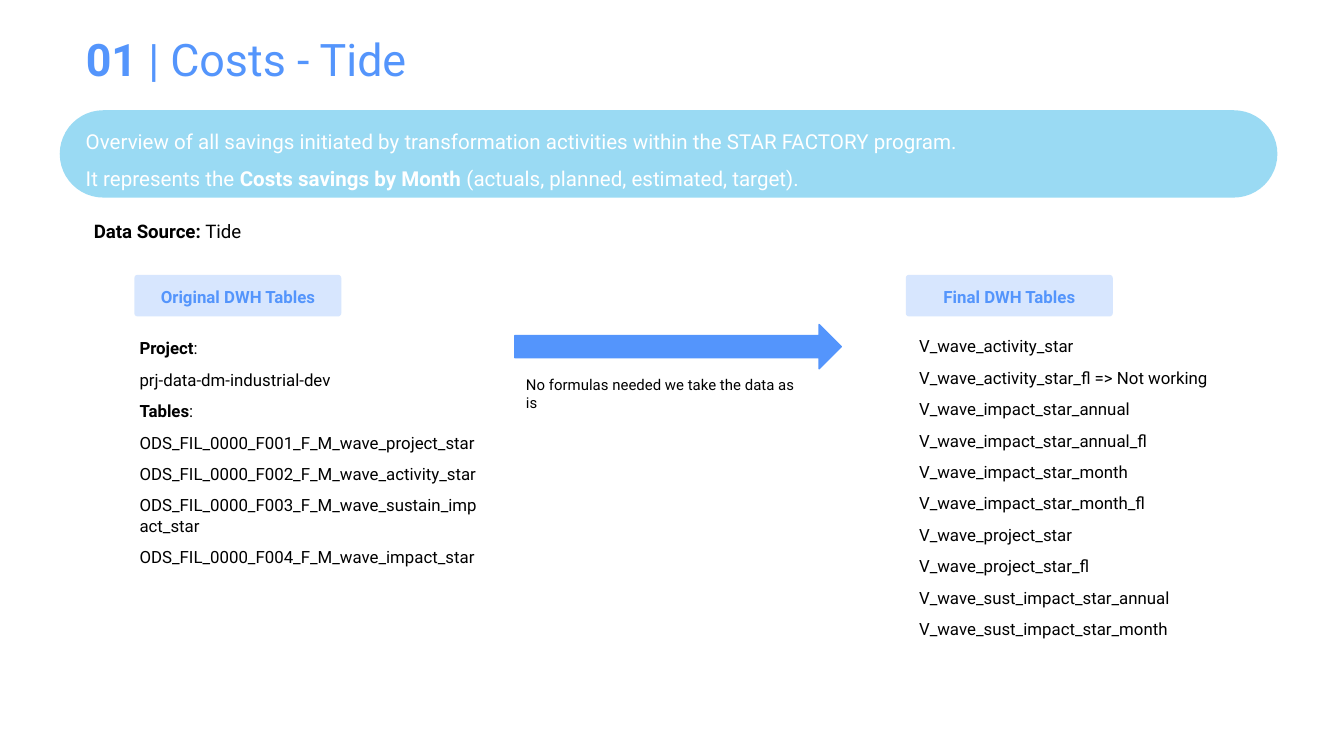
from dataclasses import dataclass, field
from typing import Any

from lxml.etree import SubElement
from pptx import Presentation
from pptx.dml.color import RGBColor
from pptx.enum.shapes import MSO_SHAPE
from pptx.enum.text import MSO_ANCHOR, MSO_AUTO_SIZE, PP_ALIGN
from pptx.oxml.ns import qn
from pptx.util import Inches, Pt

WIDTH = Inches(10)
HEIGHT = WIDTH * 9 // 16
CELL = 0.1
FONT = "Roboto"
BLUE, SKY, BLACK, WHITE = "5495FC", "81D1F0", "000000", "FFFFFF"
LEFT_COLUMN, RIGHT_COLUMN = 10, 67.4
HEADER_ROW, LIST_ROW = 20.45, 24

SOURCE_LINES = [
    "**Project**:",
    "prj-data-dm-industrial-dev",
    "**Tables**:",
    "ODS_FIL_0000_F001_F_M_wave_project_star",
    "ODS_FIL_0000_F002_F_M_wave_activity_star",
    "ODS_FIL_0000_F003_F_M_wave_sustain_impact_star",
    "ODS_FIL_0000_F004_F_M_wave_impact_star",
]
FINAL_LINES = [
    "V_wave_activity_star",
    "V_wave_activity_star_fl => Not working",
    "V_wave_impact_star_annual",
    "V_wave_impact_star_annual_fl",
    "V_wave_impact_star_month",
    "V_wave_impact_star_month_fl",
    "V_wave_project_star",
    "V_wave_project_star_fl",
    "V_wave_sust_impact_star_annual",
    "V_wave_sust_impact_star_month",
]
BANNER_LINES = [
    "Overview of all savings initiated by transformation activities within the STAR FACTORY program.",
    "It represents the **Costs savings by Month **(actuals, planned, estimated, target).",
]


@dataclass
class Area:
    """A place on the slide in grid columns and rows."""
    column: float
    row: float
    columns: float
    rows: float

    def lengths(self) -> list[int]:
        """Return left, top, width and height."""
        return [Inches(value * CELL) for value in (self.column, self.row, self.columns, self.rows)]


@dataclass
class Copy:
    """Lines of text, bold between double stars, with their format."""
    lines: list[str]
    size: float
    color: str = BLACK
    gap: float = 0
    frame: dict[str, Any] = field(default_factory=dict)
    para: dict[str, Any] = field(default_factory=dict)


@dataclass
class Block:
    """A filled preset shape."""
    area: Area
    preset: MSO_SHAPE
    fill: str
    adjustments: list[float]
    opacity: int = 100
    outline: float = 0


def color_of(value: str) -> RGBColor:
    """Turn a hex string into a colour."""
    return RGBColor.from_string(value)


def apply(target: Any, values: dict[str, Any]) -> None:
    """Set every named attribute on the target."""
    for name, value in values.items():
        setattr(target, name, value)


def write(box: Any, copy: Copy) -> None:
    """Fill a box with formatted paragraphs."""
    frame = box.text_frame
    margins = {f"margin_{side}": Inches(CELL) for side in ("left", "top", "right", "bottom")}
    apply(frame, {"word_wrap": True, **margins, **copy.frame})
    for index, line in enumerate(copy.lines):
        para = frame.paragraphs[0] if index == 0 else frame.add_paragraph()
        apply(para, {"alignment": PP_ALIGN.LEFT, "space_before": Pt(copy.gap if index else 0), **copy.para})
        for order, words in enumerate(line.split("**")):
            if words:
                span = para.add_run()
                span.text = words
                apply(span.font, {"name": FONT, "size": Pt(copy.size), "bold": order % 2 == 1})
                span.font.color.rgb = color_of(copy.color)


def draw_text(page: Any, area: Area, copy: Copy) -> None:
    """Add a text box."""
    write(page.shapes.add_textbox(*area.lengths()), copy)


def draw_block(page: Any, block: Block, copy: Copy | None = None) -> None:
    """Add a filled shape, with text if given."""
    shape = page.shapes.add_shape(block.preset, *block.area.lengths())
    shape.shadow.inherit = False
    for index, value in enumerate(block.adjustments):
        shape.adjustments[index] = value
    shape.fill.solid()
    shape.fill.fore_color.rgb = color_of(block.fill)
    if block.opacity < 100:
        tint = shape.fill._xPr.find(qn("a:solidFill"))[0]
        SubElement(tint, qn("a:alpha")).set("val", str(block.opacity * 1000))
    if block.outline:
        shape.line.color.rgb = color_of(block.fill)
        shape.line.width = Pt(block.outline)
    else:
        shape.line.fill.background()
    if copy:
        write(shape, copy)


def main() -> None:
    """Build and save the slide."""
    deck = Presentation()
    apply(deck, {"slide_width": WIDTH, "slide_height": HEIGHT})
    page = deck.slides.add_slide(deck.slide_layouts[6])
    middle = {"vertical_anchor": MSO_ANCHOR.MIDDLE}
    grow = {"auto_size": MSO_AUTO_SIZE.SHAPE_TO_FIT_TEXT}
    slim = {"margin_top": Inches(CELL / 2), "margin_bottom": Inches(CELL / 2)}
    centred = {"alignment": PP_ALIGN.CENTER, "line_spacing": 1.15}

    draw_text(page, Area(5.4, 1.1, 90.4, 6.5), Copy(["**01 **| Costs - Tide"], 24, BLUE, frame=middle))
    draw_block(
        page,
        Block(Area(4.45, 8.2, 90.6, 6.5), MSO_SHAPE.ROUNDED_RECTANGLE, SKY, [0.5], opacity=80),
        Copy(BANNER_LINES, 11, WHITE, frame=middle | slim, para={"line_spacing": 1.5}),
    )
    draw_text(page, Area(6, 15.5, 18.4, 3.7), Copy(["**Data Source: **Tide"], 10, frame=grow))

    for column, title in ((LEFT_COLUMN, "Original DWH Tables"), (RIGHT_COLUMN, "Final DWH Tables")):
        draw_block(
            page,
            Block(Area(column, HEADER_ROW, 15.4, 3.1), MSO_SHAPE.ROUNDED_RECTANGLE, BLUE, [0.08], opacity=23),
            Copy([f"**{title}**"], 9, BLUE, frame=middle, para=centred),
        )

    draw_text(page, Area(LEFT_COLUMN - 0.6, LIST_ROW + 0.15, 27.3, 19.2), Copy(SOURCE_LINES, 9, gap=6, frame=grow))
    draw_text(page, Area(RIGHT_COLUMN, LIST_ROW, 26.9, 27.1), Copy(FINAL_LINES, 9, gap=6, frame=grow))
    draw_block(page, Block(Area(38.3, 24.15, 24.3, 3.3), MSO_SHAPE.RIGHT_ARROW, BLUE, [0.5, 0.5], outline=0.75))
    draw_text(
        page,
        Area(38.15, 26.95, 22.8, 3.4),
        Copy(["No formulas needed we take the data as is"], 8, frame=grow),
    )
    deck.save("out.pptx")


if __name__ == "__main__":
    main()
